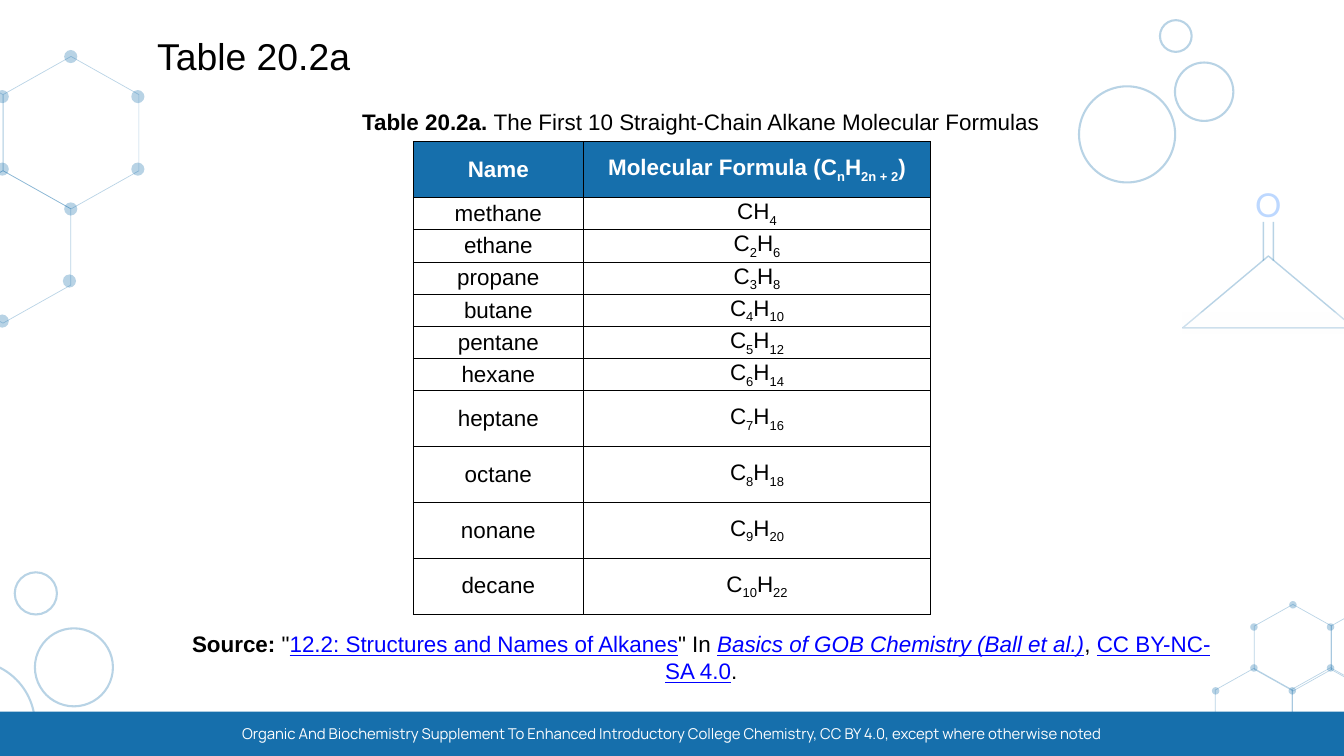
from lxml.etree import SubElement
from pptx import Presentation
from pptx.dml.color import RGBColor
from pptx.enum.shapes import MSO_CONNECTOR as CONNECTOR, MSO_SHAPE as SHAPE
from pptx.enum.text import MSO_ANCHOR as ANCHOR, PP_ALIGN as ALIGN
from pptx.oxml.ns import qn
from pptx.util import Pt

COLORS = {"blue": "166FAC", "white": "FFFFFF", "black": "000000",
          "link": "0000FF", "oxygen": "267FFF", "veil": "FEFEFE"}
FAINT = 30  # opacity of the decoration, percent
ALKANES = ["methane", "ethane", "propane", "butane", "pentane",
           "hexane", "heptane", "octane", "nonane", "decane"]


def paint(fill, color, opacity=100):
    fill.solid()
    fill.fore_color.rgb = RGBColor.from_string(COLORS[color])
    if opacity < 100:
        tint = fill._xPr.find(qn("a:solidFill"))[0]
        SubElement(tint, qn("a:alpha"), val=str(opacity * 1000))


def style(shape, fill=None, line=None, width=1, opacity=FAINT):
    shape.shadow.inherit = False
    if fill:
        paint(shape.fill, fill, opacity)
    else:
        shape.fill.background()
    if line:
        shape.line.width = Pt(width)
        paint(shape.line.fill, line, opacity)
    else:
        shape.line.fill.background()


def add_shape(slide, kind, box, **look):
    shape = slide.shapes.add_shape(kind, *map(Pt, box))
    style(shape, **look)


def add_circle(slide, x, y, diameter, **look):
    """Circle centred on x, y."""
    box = (x - diameter / 2, y - diameter / 2, diameter, diameter)
    add_shape(slide, SHAPE.OVAL, box, **look)


def write(frame, runs, align=ALIGN.CENTER, **base):
    """Fill a text frame with (text, format) runs over a base format."""
    paragraph = frame.paragraphs[0]
    paragraph.alignment = align
    for text, extra in runs:
        look = {"name": "Arial", "size": 24, "color": "black", **base, **extra}
        run = paragraph.add_run()
        run.text = text
        paint(run.font.fill, look.pop("color"), look.pop("opacity", 100))
        run.font.size = Pt(look.pop("size"))
        if look.pop("subscript", False):
            run.font._element.set("baseline", "-25000")
        for name, value in look.items():
            setattr(run.font, name, value)
    return paragraph


def add_text(slide, box, runs, anchor=ANCHOR.TOP, align=ALIGN.CENTER, **base):
    frame = slide.shapes.add_textbox(*map(Pt, box)).text_frame
    frame.word_wrap = True
    frame.vertical_anchor = anchor
    write(frame, runs, align, **base)
    return frame


def add_ring_lattice(slide, left, top, half_width, half_height, centers, nodes, diameter):
    """Pointy-top hexagons and their atoms, relative to left, top."""
    for x, y in centers:
        x, y = left + x, top + y
        corners = [(x + dx * half_width, y + dy * half_height) for dx, dy in
                   ((0, 1), (-1, 0.5), (-1, -0.5), (0, -1), (1, -0.5), (1, 0.5))]
        points = [(Pt(px), Pt(py)) for px, py in corners]
        builder = slide.shapes.build_freeform(*points[0])
        builder.add_line_segments(points[1:], close=True)
        style(builder.convert_to_shape(), line="blue", width=0.75)
    for x, y in nodes:
        add_circle(slide, left + x, top + y, diameter, fill="blue")


def add_bubbles(slide, left, top, bubbles):
    for x, y, diameter in bubbles:
        add_circle(slide, left + x, top + y, diameter, line="blue", width=2.25)


def add_ketone(slide, left, top, width, height):
    """Triangle with a double bond up to an oxygen."""
    peak, base = top + 83.5, top + height
    add_shape(slide, SHAPE.ISOSCELES_TRIANGLE, (left, peak, width, base - peak),
              line="blue", width=1.5)
    add_shape(slide, SHAPE.RECTANGLE, (left, base - 16.5, width, 23), fill="veil")
    middle = left + width / 2
    for x in (middle + 5.4, middle - 5.4):
        bond = slide.shapes.add_connector(
            CONNECTOR.STRAIGHT, Pt(x), Pt(top + 46.8), Pt(x), Pt(top + 88.5))
        bond.line.width = Pt(1.69)
        paint(bond.line.fill, "blue", FAINT)
        SubElement(bond._element.spPr, qn("a:effectLst"))
    frame = add_text(slide, (middle - 14.7, top, 29.4, 46.8), [("O", {})],
                     name="Lato", size=35.3, color="oxygen", opacity=FAINT)
    frame.margin_left = frame.margin_right = frame.margin_top = frame.margin_bottom = 0
    frame.paragraphs[0].line_spacing = Pt(49.5)


def add_decoration(slide):
    add_ring_lattice(
        slide, 1302.5, 648, 41.4, 46.4,
        [(164.9, 46), (82.8, 46), (123.1, 113.8), (41, 114.5)],
        [(82.8, 0), (123.1, 23.8), (123.1, 67.7), (41, 67.7), (82.1, 92.2),
         (0, 92.2), (41, 23.8)], 8)
    add_bubbles(slide, 1156, 21.6, [(51.6, 122.4, 103), (134.2, 76.7, 62.6), (103.8, 17, 34)])
    add_bubbles(slide, 0, 613, [(-31, 163.5, 137), (79.2, 102, 83.6), (38.4, 22.8, 45.2)])
    add_ketone(slide, 1267.2, 190.8, 183.6, 160.5)
    add_ring_lattice(
        slide, 2.4, 60.6, 72.7, 81.7,
        [(73.7, 81.6), (-72, 81.6), (0.8, 204)],
        [(73.4, 0), (145.3, 42.9), (145.3, 120.6), (0, 42.9), (0, 120.6),
         (73.4, 163.3), (72, 240.5), (0, 283.4)], 14.1)


def set_border(cell, side, width):
    line = SubElement(cell._tc.get_or_add_tcPr(), qn("a:" + side), w=str(Pt(width)))
    fill = SubElement(line, qn("a:solidFill"))
    SubElement(fill, qn("a:srgbClr"), val=COLORS["black"])


def formula(carbon, hydrogen):
    return [("C", {}), (carbon, {"subscript": True}),
            ("H", {}), (hydrogen, {"subscript": True})]


def add_alkane_table(slide, left, top, widths):
    rows = [([("Name", {})],
             [("Molecular Formula (", {}), *formula("n", "2n + 2"), (")", {})])]
    for n, name in enumerate(ALKANES, 1):
        rows.append(([(name, {})], formula(str(n) if n > 1 else "", str(2 * n + 2))))
    heights = [59.8] + [34.5] * 6 + [59.8] * 4
    table = slide.shapes.add_table(len(rows), len(widths), Pt(left), Pt(top),
                                   Pt(sum(widths)), Pt(sum(heights))).table
    for column, width in zip(table.columns, widths):
        column.width = Pt(width)
    for r, (row, height) in enumerate(zip(rows, heights)):
        table.rows[r].height = Pt(height)
        for c, runs in enumerate(row):
            cell = table.cell(r, c)
            cell.margin_left = cell.margin_right = cell.margin_top = cell.margin_bottom = 0
            cell.vertical_anchor = ANCHOR.MIDDLE
            header = r == 0
            write(cell.text_frame, [run for run in runs if run[0]], bold=header,
                  color="white" if header else "black")
            for side in ("lnL", "lnR", "lnT", "lnB"):
                set_border(cell, side, 2 if header and side == "lnB" else 1)
            paint(cell.fill, "blue" if header else "white")


def add_source(slide, box):
    link = {"color": "link", "underline": True}
    add_text(slide, box, [
        ("Source:", {"bold": True}), (' "', {}),
        ("12.2: Structures and Names of Alkanes", link), ('" In ', {}),
        ("Basics of GOB Chemistry (Ball et al.)", {**link, "italic": True}),
        (", ", {}), ("CC BY-NC-SA 4.0", link), (".", {})])


def add_footer(slide, left, top, width, height):
    add_shape(slide, SHAPE.RECTANGLE, (left, top, width, height), fill="blue", opacity=100)
    add_text(slide, (left + 224, top + 9.4, width - 448, 28.8), [
        ("Organic And Biochemistry Supplement To Enhanced Introductory College "
         "Chemistry, CC BY 4.0, except where otherwise noted", {})],
        ANCHOR.MIDDLE, name="Manrope", size=16, color="white")


def main():
    presentation = Presentation()
    presentation.slide_width, presentation.slide_height = Pt(1440), Pt(810)
    slide = presentation.slides.add_slide(presentation.slide_layouts[6])

    # Background
    add_decoration(slide)
    # Title and caption
    add_text(slide, (161.3, 15, 930, 90), [("Table 20.2a", {})],
             ANCHOR.MIDDLE, ALIGN.LEFT, size=40)
    add_text(slide, (161.3, 112.3, 1178.6, 64.8), [
        ("Table 20.2a. ", {"bold": True}),
        ("The First 10 Straight-Chain Alkane Molecular Formulas", {})])
    # Table, source and footer
    add_alkane_table(slide, 442.8, 151.9, (182.2, 372.2))
    add_source(slide, (184.3, 672, 1134, 121))
    add_footer(slide, 0, 762.5, 1440, 47.5)

    presentation.save("out.pptx")


if __name__ == "__main__":
    main()
